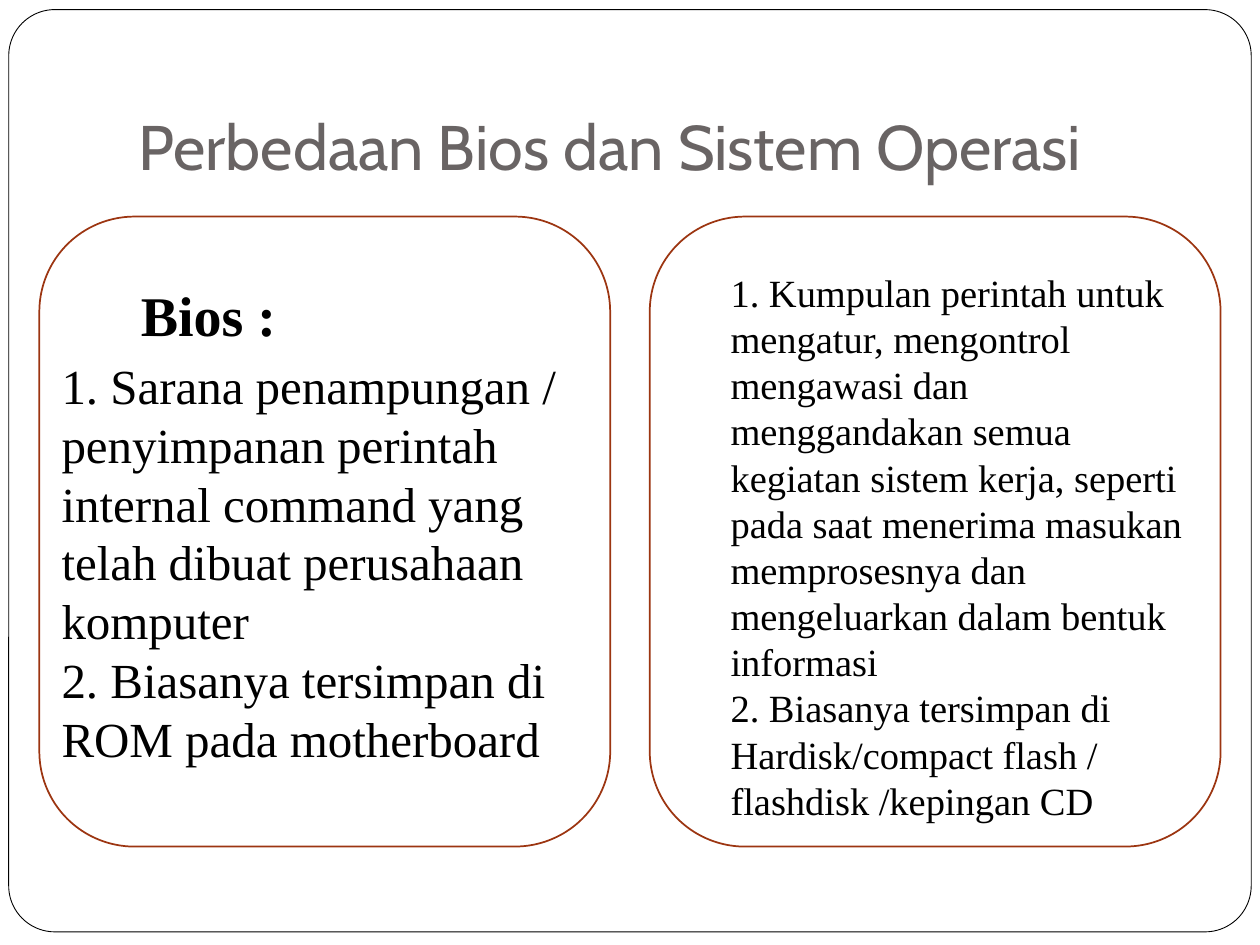
"""Build a slide comparing the BIOS with the operating system."""
from pptx import Presentation
from pptx.dml.color import RGBColor
from pptx.enum.shapes import MSO_SHAPE
from pptx.enum.text import MSO_ANCHOR
from pptx.util import Pt

ROUNDED = MSO_SHAPE.ROUNDED_RECTANGLE
TOP, BOTTOM = MSO_ANCHOR.TOP, MSO_ANCHOR.BOTTOM
COLORS = {"white": "FFFFFF", "black": "000000", "panel": "9C3511", "title": "696464"}
SERIF = "Times New Roman"


def add_panel(slide, box, line_color, line_width):
    shape = slide.shapes.add_shape(ROUNDED, *map(Pt, box))
    shape.shadow.inherit = False
    shape.fill.background()
    shape.line.color.rgb = RGBColor.from_string(COLORS[line_color])
    shape.line.width = Pt(line_width)
    return shape


def add_text(slide, box, lines, font_name, size, color="black", bold=False,
             anchor=TOP, top=3.6, bottom=3.6):
    frame = slide.shapes.add_textbox(*map(Pt, box)).text_frame
    frame.word_wrap = True
    frame.vertical_anchor = anchor
    frame.margin_top, frame.margin_bottom = Pt(top), Pt(bottom)
    frame.text = "\n".join(lines)
    for paragraph in frame.paragraphs:
        paragraph.font.name = font_name
        paragraph.font.size = Pt(size)
        paragraph.font.bold = bold
        paragraph.font.color.rgb = RGBColor.from_string(COLORS[color])
        if font_name == SERIF:
            paragraph.line_spacing = Pt(size * 1.2)


presentation = Presentation()
presentation.slide_width, presentation.slide_height = Pt(720), Pt(540)
slide = presentation.slides.add_slide(presentation.slide_layouts[6])

border = add_panel(slide, (5, 5.5, 710, 527), "black", 0.5)
border.adjustments[0] = 0.05
border.fill.solid()
border.fill.fore_color.rgb = RGBColor.from_string(COLORS["white"])

add_text(slide, (72, 21.6, 612, 90), ["Perbedaan Bios dan Sistem Operasi"],
         "Cabin", 36, "title", anchor=BOTTOM, bottom=7.2)

for left in (22.5, 371.3):
    add_panel(slide, (left, 123.8, 326.2, 360), "panel", 1)

bios_lines = [
    "1. Sarana penampungan / penyimpanan perintah internal command yang "
    "telah dibuat perusahaan komputer",
    "2. Biasanya tersimpan di ROM pada motherboard",
]
system_lines = [
    "1. Kumpulan perintah untuk mengatur, mengontrol mengawasi dan "
    "menggandakan semua kegiatan sistem kerja, seperti pada saat menerima "
    "masukan memprosesnya dan mengeluarkan dalam bentuk informasi",
    "2. Biasanya tersimpan di Hardisk/compact flash / flashdisk /kepingan CD",
]
add_text(slide, (28.1, 156.2, 297.4, 288.7), bios_lines, SERIF, 28, top=47)
add_text(slide, (73.4, 134.6, 146.2, 67.7), ["Bios :"], SERIF, 32, bold=True, top=25.5)
add_text(slide, (410.4, 106.6, 275.8, 370.8), system_lines, SERIF, 22, top=47)

presentation.save("out.pptx")
